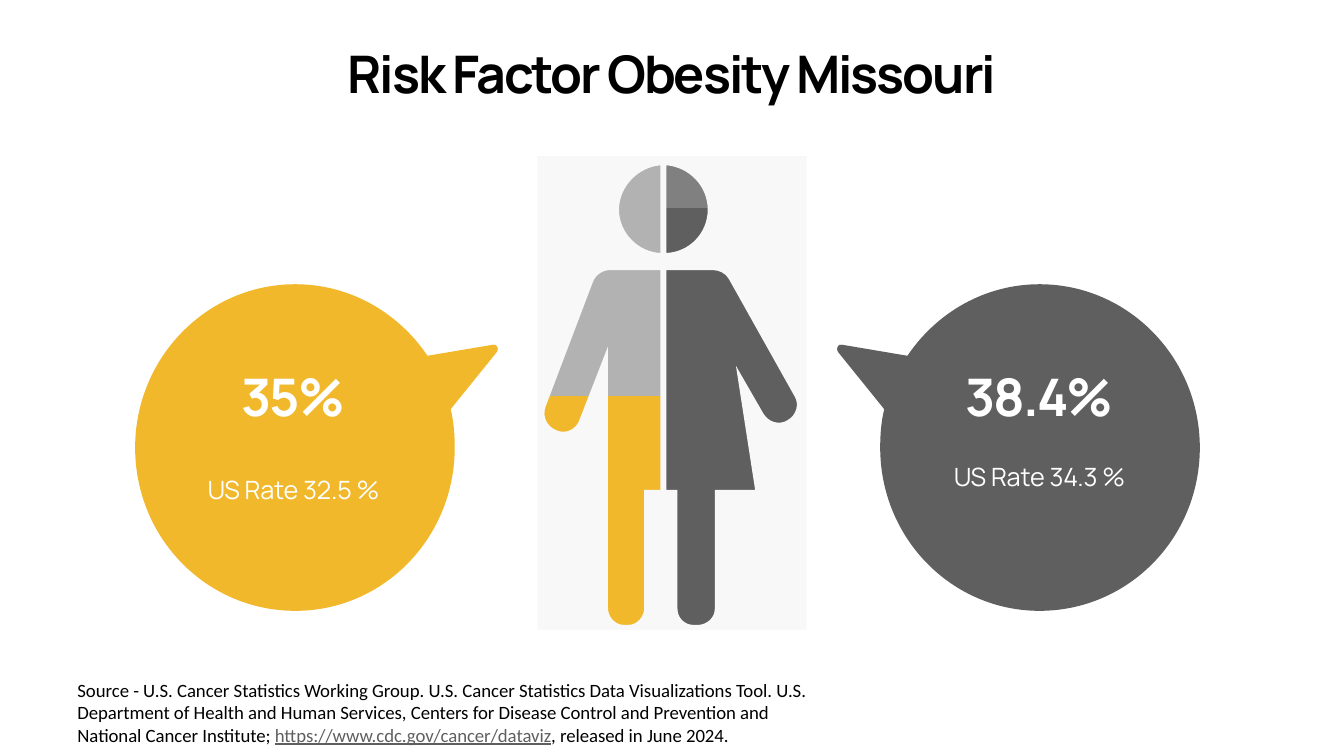
import dataclasses

import pptx
import pptx.chart.data
import pptx.dml.color
import pptx.enum.chart
import pptx.enum.text
import pptx.util
from lxml import etree
from pptx.util import Inches

Pt = pptx.util.Pt
RGB = pptx.dml.color.RGBColor.from_string
ANCHOR = pptx.enum.text.MSO_ANCHOR
ALIGN = pptx.enum.text.PP_ALIGN
FIT = pptx.enum.text.MSO_AUTO_SIZE


@dataclasses.dataclass(frozen=True)
class Theme:
    gold: str = "F1B82C"
    dark: str = "5F5F5F"
    mid: str = "808080"
    light: str = "B2B2B2"
    mask: str = "F8F8F8"
    black: str = "000000"
    white: str = "FFFFFF"
    display: str = "Manrope"
    body: str = "Calibri"
    headline_size: float = 37
    headline_tracking: float = -1.48
    chart_size: float = 34
    rate_size: float = 18
    source_size: float = 13.33


theme = Theme()
deck = pptx.Presentation()
deck.slide_width, deck.slide_height = Inches(13.33), Inches(7.5)
slide = deck.slides.add_slide(deck.slide_layouts[6])


def draw_outline(shapes, contours, color):
    """Draw closed contours as one shape: a pair is a line, six numbers a Bezier curve."""
    builder = shapes.build_freeform(*map(Inches, contours[0][0]))
    for number, (start, *segments) in enumerate(contours):
        if number:
            builder.move_to(*map(Inches, start))
        builder.add_line_segments([(Inches(x), Inches(y)) for segment in segments
                                   for x, y in zip(segment[::2], segment[1::2])], close=True)
    outline = builder.convert_to_shape()
    outline.shadow.inherit = False
    outline.fill.solid()
    outline.fill.fore_color.rgb = RGB(color)
    outline.line.fill.background()

    # Join each three control points into one curve
    lines = iter(outline._element.xpath(".//a:path/a:lnTo"))
    for segment in (segment for contour in contours for segment in contour[1:]):
        first, *others = [next(lines) for _ in segment[::2]]
        if others:
            first.tag = first.tag.replace("lnTo", "cubicBezTo")
            for other in others:
                first.append(other[0])
                other.getparent().remove(other)


def add_text(box, runs, size, font, bold=False, tracking=0, anchor=ANCHOR.TOP,
             align=ALIGN.CENTER, spacing=None, fit=FIT.SHAPE_TO_FIT_TEXT):
    """Add a one-paragraph text box; runs are (text, color, underlined)."""
    frame = slide.shapes.add_textbox(*map(Inches, box)).text_frame
    frame.word_wrap = True
    frame.auto_size = fit
    frame.vertical_anchor = anchor
    paragraph = frame.paragraphs[0]
    paragraph.alignment = align
    if spacing:
        paragraph.line_spacing = Pt(spacing)
    for text, color, underlined in runs:
        run = paragraph.add_run()
        run.text = text
        run.font.size = Pt(size)
        run.font.name = font
        run.font.bold = bold
        run.font.underline = underlined
        run.font.color.rgb = RGB(color)
        if tracking:
            run.font._element.set("spc", str(round(tracking * 100)))


# Speech bubbles: the men's bubble mirrors the women's
women_bubble = [
    (10.31, 2.82), (9.77, 2.82, 9.29, 3.1, 9, 3.53), (8.35, 3.42),
    (8.31, 3.41, 8.29, 3.46, 8.31, 3.49), (8.77, 4.06),
    (8.74, 4.18, 8.73, 4.31, 8.73, 4.44), (8.73, 5.34, 9.44, 6.06, 10.31, 6.06),
    (11.19, 6.06, 11.9, 5.34, 11.9, 4.44), (11.9, 3.55, 11.19, 2.82, 10.31, 2.82),
]
men_bubble = [tuple(v if i % 2 else 13.24 - v for i, v in enumerate(segment))
              for segment in women_bubble]
draw_outline(slide.shapes, [women_bubble], theme.dark)
draw_outline(slide.shapes, [men_bubble], theme.gold)

add_text((0.83, 0.36, 11.67, 0.72), [("Risk Factor Obesity Missouri", theme.black, False)],
         theme.headline_size, theme.display, bold=True, tracking=theme.headline_tracking,
         anchor=ANCHOR.BOTTOM)

for left, rate_top, state_rate, us_rate in [
    (1.89, 4.71, "35%", "US Rate 32.5 %"),
    (9.29, 4.58, "38.4%", "US Rate 34.3 %"),
]:
    add_text((left, rate_top, 2.04, 0.36), [(us_rate, theme.white, False)],
             theme.rate_size, theme.display, tracking=-0.1, spacing=18)
    add_text((left, 3.56, 2.04, 0.72), [(state_rate, theme.white, False)],
             theme.headline_size, theme.display, bold=True, tracking=theme.headline_tracking,
             anchor=ANCHOR.BOTTOM)

# Columns that show through the figure
figure = slide.shapes.add_group_shape()
for left, width, levels in [
    (5.37, 1.21, [(50, theme.gold), (50, theme.light)]),
    (6.58, 1.35, [(90, theme.dark), (10, theme.mid)]),
]:
    level_data = pptx.chart.data.CategoryChartData()
    level_data.categories = ["1"]
    for number, (value, _) in enumerate(levels, 1):
        level_data.add_series(f"Series {number}", [value])
    chart = figure.shapes.add_chart(
        pptx.enum.chart.XL_CHART_TYPE.COLUMN_STACKED_100,
        Inches(left), Inches(1.6), Inches(width), Inches(4.65), level_data).chart
    chart.has_legend = False
    chart.has_title = False
    chart.font.name = theme.display
    chart.font.size = Pt(theme.chart_size)
    chart.font.bold = True
    chart.font.color.rgb = RGB(theme.white)
    chart.category_axis.visible = False
    chart.value_axis.visible = False
    chart.value_axis.has_major_gridlines = False
    chart.value_axis.minimum_scale = 0
    chart.value_axis.tick_labels.number_format = "0%"
    chart.value_axis.tick_labels.number_format_is_linked = False
    plot = chart.plots[0]
    plot.gap_width = 0
    plot.overlap = 100
    plot.vary_by_categories = False
    for series, (_, color) in zip(plot.series, levels):
        series.format.fill.solid()
        series.format.fill.fore_color.rgb = RGB(color)

    # Stretch the plot over the whole chart frame
    plot_area = chart._chartSpace.chart.plotArea
    namespace = etree.QName(plot_area).namespace
    for old_layout in plot_area.findall(f"{{{namespace}}}layout"):
        plot_area.remove(old_layout)
    layout = etree.Element(f"{{{namespace}}}layout")
    manual = etree.SubElement(layout, f"{{{namespace}}}manualLayout")
    for tag, setting in [("layoutTarget", "inner"), ("xMode", "edge"), ("yMode", "edge"),
                         ("x", "0"), ("y", "0"), ("w", "1"), ("h", "1")]:
        etree.SubElement(manual, f"{{{namespace}}}{tag}").set("val", setting)
    plot_area.insert(0, layout)

# Mask panel with the figure cut out of it
panel = [(5.33, 1.55), (8, 1.55), (8, 6.25), (5.33, 6.25)]
man_body = [
    (6.09, 2.68), (6.08, 2.68), (5.99, 2.67, 5.91, 2.72, 5.88, 2.8), (5.41, 4.04),
    (5.38, 4.13, 5.42, 4.23, 5.52, 4.27), (5.61, 4.31, 5.72, 4.26, 5.75, 4.16),
    (6.03, 3.44), (6.03, 6.03), (6.03, 6.12, 6.1, 6.2, 6.19, 6.2), (6.23, 6.2),
    (6.32, 6.2, 6.39, 6.12, 6.39, 6.03), (6.39, 4.86), (6.55, 4.86), (6.55, 2.68),
]
woman_body = [
    (6.61, 2.68), (6.61, 4.86), (6.72, 4.86), (6.72, 6.04),
    (6.72, 6.13, 6.79, 6.2, 6.88, 6.2), (6.92, 6.2), (7.01, 6.2, 7.09, 6.13, 7.09, 6.04),
    (7.09, 4.86), (7.49, 4.86), (7.3, 3.63), (7.57, 4.1),
    (7.62, 4.19, 7.73, 4.22, 7.81, 4.17), (7.9, 4.12, 7.93, 4.01, 7.88, 3.93),
    (7.23, 2.77), (7.2, 2.71, 7.13, 2.68, 7.07, 2.68),
]
man_head = [(6.55, 1.64), (6.33, 1.66, 6.14, 1.85, 6.14, 2.08),
            (6.14, 2.31, 6.33, 2.5, 6.55, 2.51)]
woman_head = [(6.61, 1.64), (6.61, 2.51), (6.84, 2.5, 7.02, 2.31, 7.02, 2.08),
              (7.02, 1.85, 6.84, 1.66, 6.61, 1.64)]
draw_outline(figure.shapes, [man_body, woman_body, man_head, woman_head, panel], theme.mask)

add_text((0.67, 6.73, 7.54, 0.67), [
    ("Source - U.S. Cancer Statistics Working Group. U.S. Cancer Statistics Data "
     "Visualizations Tool. U.S. Department of Health and Human Services, Centers for Disease "
     "Control and Prevention and National Cancer Institute; ", theme.black, False),
    ("https://www.cdc.gov/cancer/dataviz", theme.dark, True),
    (", released in June 2024.", theme.black, False),
], theme.source_size, theme.body, anchor=ANCHOR.MIDDLE, align=ALIGN.LEFT, fit=FIT.NONE)

deck.save("out.pptx")
